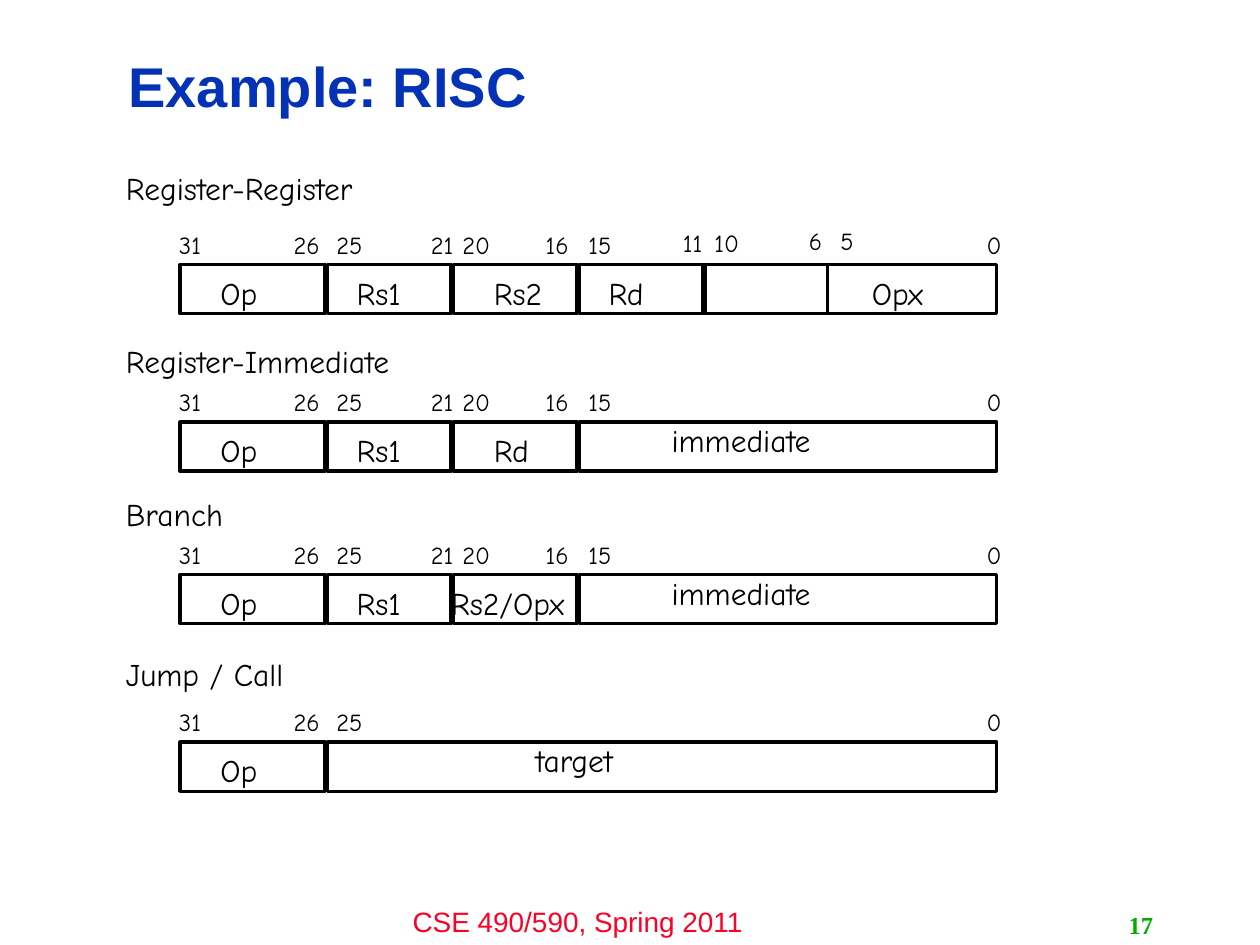
from dataclasses import dataclass

from pptx import Presentation
from pptx.dml.color import RGBColor
from pptx.enum.shapes import MSO_SHAPE
from pptx.enum.text import MSO_ANCHOR, MSO_AUTO_SIZE, PP_ALIGN
from pptx.util import Inches, Pt

BLACK = RGBColor(0x00, 0x00, 0x00)
BLUE = RGBColor(0x03, 0x32, 0xB7)
RED = RGBColor(0xFC, 0x01, 0x28)
GREEN = RGBColor(0x00, 0xAE, 0x00)

HEADING_LEFT = 0.93
FIELD_HEIGHT = 0.39
BIT_RISE = 0.28
LABEL_DROP = 0.09
WIDE_LABEL_DROP = 0.01

# Left and width of each field, named by its bits
FIELDS = {
    "31-26": (1.43, 1.15),
    "25-21": (2.6, 0.98),
    "20-16": (3.6, 0.98),
    "15-11": (4.6, 0.98),
    "10-6": (5.6, 0.97),
    "15-0": (4.6, 3.31),
    "25-0": (2.6, 5.31),
}
BIT_LEFTS = {31: 1.35, 26: 2.26, 25: 2.6, 21: 3.35, 20: 3.6, 16: 4.26,
             15: 4.6, 11: 5.35, 10: 5.6, 6: 6.35, 5: 6.6, 0: 7.76}
# Extra height of the bit numbers above the narrow fields on the right
BIT_LIFTS = {11: 0.01, 10: 0.01, 6: 0.03, 5: 0.03}
LABEL_WIDTHS = {"Op": 0.47, "Rs1": 0.53, "Rs2": 0.57, "Rd": 0.44, "Opx": 0.62,
                "Rs2/Opx": 1.18, "immediate": 1.34, "target": 0.89}
WIDE_LABELS = ("immediate", "target")


@dataclass
class InstructionFormat:
    heading: str
    heading_width: float
    heading_top: float
    heading_spacing: float
    top: float
    fields: tuple
    bits: tuple
    labels: dict


FORMATS = (
    InstructionFormat(
        "Register-Register", 2.3, 1.36, 0.85, 2.1,
        ("31-26", "25-21", "20-16", "15-0", "15-11", "10-6"),
        (31, 26, 25, 21, 20, 16, 15, 11, 10, 6, 5, 0),
        {"Op": 1.68, "Rs1": 2.76, "Rs2": 3.85, "Rd": 4.76, "Opx": 6.85}),
    InstructionFormat(
        "Register-Immediate", 2.57, 2.73, 0.85, 3.35,
        ("31-26", "25-21", "20-16", "15-0"),
        (31, 26, 25, 21, 20, 16, 15, 0),
        {"Op": 1.68, "Rs1": 2.76, "Rd": 3.85, "immediate": 5.26}),
    InstructionFormat(
        "Branch", 0.96, 3.93, 0.9, 4.56,
        ("31-26", "25-21", "20-16", "15-0"),
        (31, 26, 25, 21, 20, 16, 15, 0),
        {"Op": 1.68, "Rs1": 2.76, "Rs2/Opx": 3.51, "immediate": 5.26}),
    InstructionFormat(
        "Jump / Call", 1.54, 5.2, 0.9, 5.89,
        ("31-26", "25-0"),
        (31, 26, 25, 0),
        {"Op": 1.68, "target": 4.18}),
)


def write_text(shape, text, *, size, font="Comic Neue", color=BLACK, bold=False,
               align=PP_ALIGN.LEFT, spacing=1.0, anchor=MSO_ANCHOR.TOP,
               margins=(0.1, 0.05), wrap=True, auto_size=MSO_AUTO_SIZE.NONE):
    frame = shape.text_frame
    frame.word_wrap = wrap
    frame.auto_size = auto_size
    frame.vertical_anchor = anchor
    frame.margin_left = frame.margin_right = Inches(margins[0])
    frame.margin_top = frame.margin_bottom = Inches(margins[1])
    paragraph = frame.paragraphs[0]
    paragraph.alignment = align
    paragraph.line_spacing = spacing
    run = paragraph.add_run()
    run.text = text
    run.font.name = font
    run.font.size = Pt(size)
    run.font.bold = bold
    run.font.color.rgb = color


def add_text(slide, text, left, top, width, height, **text_format):
    box = slide.shapes.add_textbox(
        Inches(left), Inches(top), Inches(width), Inches(height))
    write_text(box, text, **text_format)


def add_label(slide, text, left, top, width, height=0.31, *, size=18, spacing=0.85):
    """Add a one-line text with tight margins."""
    add_text(slide, text, left, top, width, height, size=size, spacing=spacing,
             margins=(0.07, 0.03), wrap=False,
             auto_size=MSO_AUTO_SIZE.SHAPE_TO_FIT_TEXT)


def add_field(slide, left, top, width):
    field = slide.shapes.add_shape(
        MSO_SHAPE.RECTANGLE, Inches(left), Inches(top),
        Inches(width), Inches(FIELD_HEIGHT))
    field.shadow.inherit = False
    field.fill.background()
    field.line.color.rgb = BLACK
    field.line.width = Pt(2)


def add_format(slide, layout):
    """Add one instruction format: heading, fields, bit numbers and labels."""
    add_label(slide, layout.heading, HEADING_LEFT, layout.heading_top,
              layout.heading_width, spacing=layout.heading_spacing)
    for name in layout.fields:
        left, width = FIELDS[name]
        add_field(slide, left, layout.top, width)
    for bit in layout.bits:
        top = layout.top - BIT_RISE - BIT_LIFTS.get(bit, 0)
        add_label(slide, str(bit), BIT_LEFTS[bit], top,
                  0.38 if bit >= 10 else 0.26, 0.27, size=14, spacing=0.9)
    for text, left in layout.labels.items():
        drop = WIDE_LABEL_DROP if text in WIDE_LABELS else LABEL_DROP
        add_label(slide, text, left, layout.top + drop, LABEL_WIDTHS[text])


def add_title(slide, text):
    title = slide.shapes.title
    title.left, title.top = Inches(0.92), Inches(0.5)
    title.width, title.height = Inches(8.25), Inches(0.42)
    write_text(title, text, size=32, font="Arial", color=BLUE, bold=True,
               spacing=0.9, anchor=MSO_ANCHOR.MIDDLE)


def add_footer(slide):
    add_text(slide, "CSE 490/590, Spring 2011", 2.92, 7.13, 3.33, 0.37,
             size=16, font="Arial", color=RED, align=PP_ALIGN.CENTER)
    add_text(slide, "17", 7.17, 7.18, 2.08, 0.32, size=14,
             font="Times New Roman", color=GREEN, bold=True,
             align=PP_ALIGN.RIGHT, anchor=MSO_ANCHOR.MIDDLE)


def main():
    presentation = Presentation()
    presentation.slide_width = Inches(10)
    presentation.slide_height = Inches(7.5)
    slide = presentation.slides.add_slide(presentation.slide_layouts[5])
    add_title(slide, "Example: RISC")
    for layout in FORMATS:
        add_format(slide, layout)
    add_footer(slide)
    presentation.save("out.pptx")


if __name__ == "__main__":
    main()
